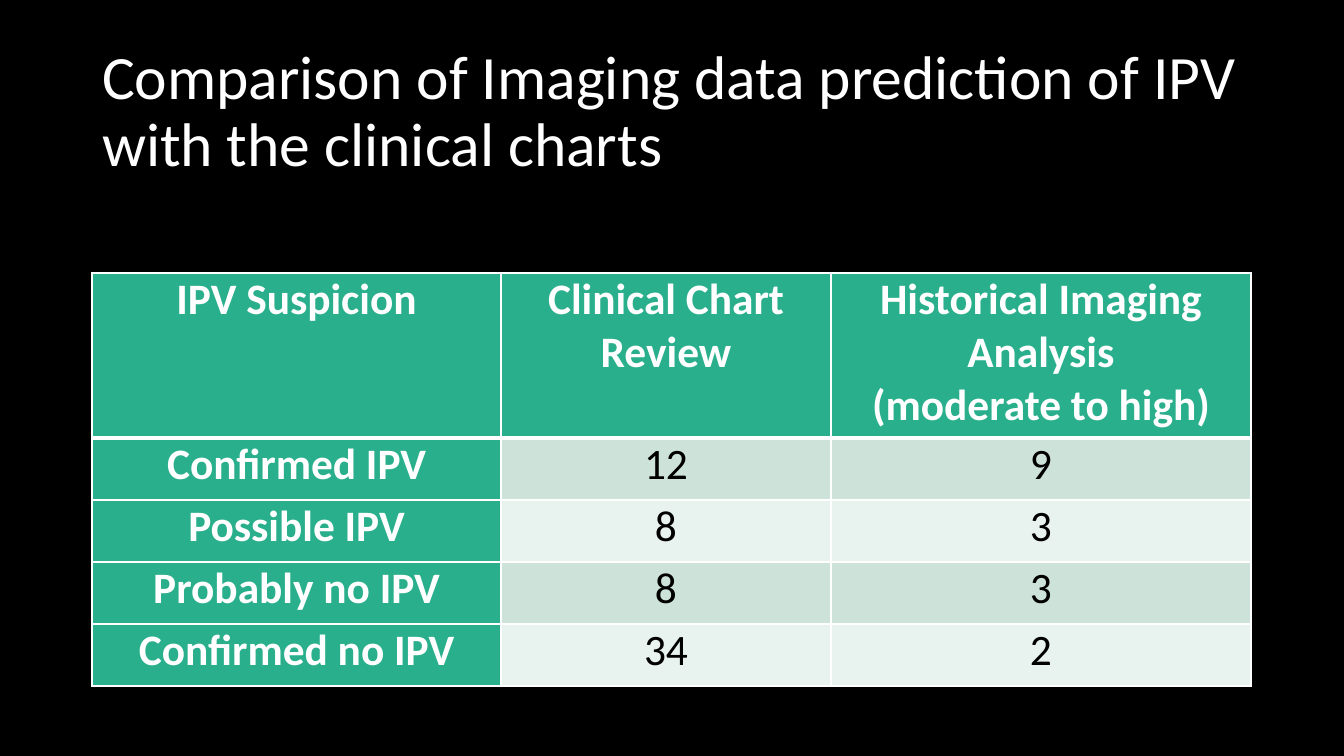
"""Build the slide that compares imaging predictions of IPV with clinical charts."""
import pptx
import pptx.util
import pptx.dml.color
import pptx.enum.text
import pptx.oxml
import pptx.oxml.ns

PX = 12700 * 72 / 100.8
HUES = {"back": "000000", "white": "FFFFFF", "ink": "000000",
        "green": "29AF8C", "dark": "CDE3DA", "light": "E8F2EE"}
ROWS = [
    ["IPV Suspicion", "Clinical Chart Review",
     "Historical Imaging Analysis\n(moderate to high)"],
    ["Confirmed IPV", "12", "9"],
    ["Possible IPV", "8", "3"],
    ["Probably no IPV", "8", "3"],
    ["Confirmed no IPV", "34", "2"],
]
WIDTHS = [409, 330, 420]
HEAD, ROW = 165, 62


def px(num):
    return pptx.util.Emu(round(num * PX))


def write(frame, text, size, hue, bold=False, align="LEFT", space=1.0):
    frame.text = text
    for par in frame.paragraphs:
        par.alignment = getattr(pptx.enum.text.PP_ALIGN, align)
        par.line_spacing = space
        for run in par.runs:
            run.font.name = "Calibri"
            run.font.size = pptx.util.Pt(size)
            run.font.bold = bold
            run.font.color.rgb = pptx.dml.color.RGBColor.from_string(HUES[hue])


deck = pptx.Presentation()
deck.slide_width, deck.slide_height = px(1344), px(756)
slide = deck.slides.add_slide(deck.slide_layouts[5])
back = slide.background.fill
back.solid()
back.fore_color.rgb = pptx.dml.color.RGBColor.from_string(HUES["back"])

title = slide.shapes.title
title.left, title.top, title.width, title.height = px(92), px(40), px(1159), px(146)
title.text_frame.word_wrap = True
title.text_frame.auto_size = pptx.enum.text.MSO_AUTO_SIZE.NONE
title.text_frame.vertical_anchor = pptx.enum.text.MSO_ANCHOR.MIDDLE
write(title.text_frame,
      "Comparison of Imaging data prediction of IPV with the clinical charts",
      size=44, hue="white", space=0.9)

high = HEAD + ROW * (len(ROWS) - 1)
table = slide.shapes.add_table(len(ROWS), len(WIDTHS), px(92), px(273),
                               px(sum(WIDTHS)), px(high)).table
for col, width in zip(table.columns, WIDTHS):
    col.width = px(width)

for r, texts in enumerate(ROWS):
    table.rows[r].height = px(ROW if r else HEAD)
    for c, text in enumerate(texts):
        cell = table.cell(r, c)
        label = r == 0 or c == 0
        cell.margin_left = cell.margin_right = px(21)
        cell.margin_top = cell.margin_bottom = 0
        cell.vertical_anchor = pptx.enum.text.MSO_ANCHOR.TOP
        write(cell.text_frame, text, size=31, hue="white" if label else "ink",
              bold=label, align="CENTER")
        tone = "green" if label else "dark" if r % 2 else "light"
        cell.fill.solid()
        cell.fill.fore_color.rgb = pptx.dml.color.RGBColor.from_string(HUES[tone])
        props = cell._tc.get_or_add_tcPr()
        for spot, side in enumerate("LRTB"):
            thick = (r, side) in [(0, "B"), (1, "T")]
            line = pptx.oxml.parse_xml(
                f'<a:ln{side} {pptx.oxml.ns.nsdecls("a")} w="{38100 if thick else 12700}">'
                f'<a:solidFill><a:srgbClr val="{HUES["white"]}"/></a:solidFill></a:ln{side}>')
            props.insert(spot, line)

deck.save("out.pptx")
